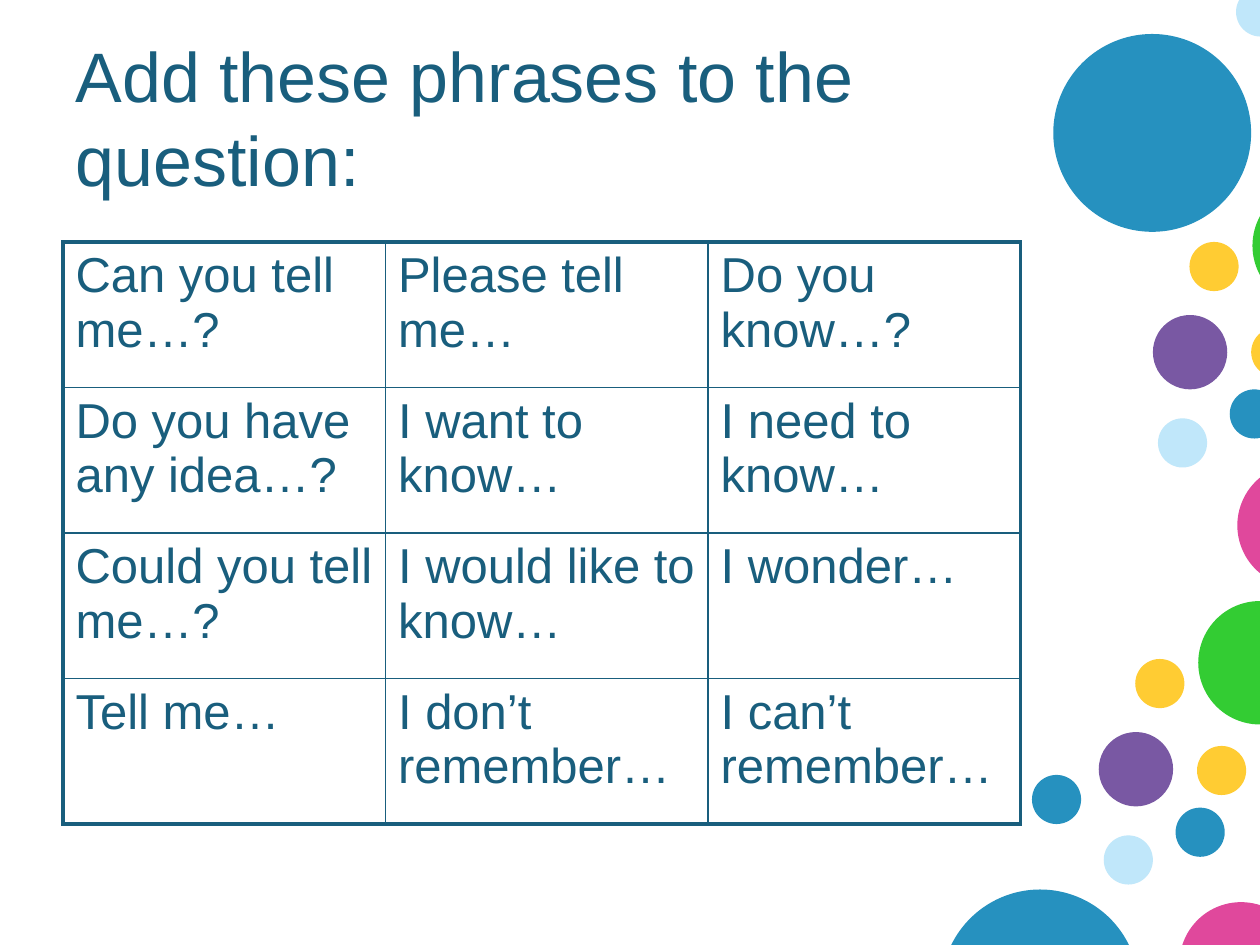
from lxml.etree import SubElement
from pptx import Presentation
from pptx.dml.color import RGBColor
from pptx.enum.shapes import MSO_SHAPE
from pptx.enum.text import MSO_ANCHOR, MSO_AUTO_SIZE, PP_ALIGN
from pptx.oxml.ns import qn
from pptx.util import Inches, Pt

COLORS = {
    "ink": "195E7D", "blue": "2691BF", "sky": "C0E7FA", "green": "33CC33",
    "yellow": "FFCC33", "pink": "E0489C", "purple": "7958A3",
}
DIAMETERS = {"small": 0.39, "medium": 0.59, "large": 0.98, "huge": 1.57}
BUBBLES = [
    ("green", "large", 9.51, 4.77), ("yellow", "small", 9.01, 5.23),
    ("pink", "large", 9.82, 3.68), ("purple", "medium", 8.72, 5.81),
    ("blue", "small", 8.19, 6.15), ("yellow", "small", 9.5, 5.92),
    ("sky", "small", 8.76, 6.63), ("blue", "small", 9.33, 6.41),
    ("blue", "huge", 8.36, 0.27), ("green", "large", 9.94, 1.46),
    ("yellow", "small", 9.44, 1.92), ("purple", "medium", 9.15, 2.5),
    ("yellow", "small", 9.93, 2.6), ("sky", "small", 9.19, 3.32),
    ("blue", "small", 9.76, 3.09), ("blue", "huge", 7.47, 7.06),
    ("pink", "large", 9.36, 7.16), ("sky", "small", 9.81, -0.1),
]
PHRASES = [
    ["Can you tell me…?", "Please tell me…", "Do you know…?"],
    ["Do you have any idea…?", "I want to know…", "I need to know…"],
    ["Could you tell me…?", "I would like to know…", "I wonder…"],
    ["Tell me…", "I don’t remember…", "I can’t remember…"],
]
COLUMN_SHARES = [2.56, 2.56, 2.48]
OUTER_LINE, INNER_LINE = 2.25, 1


def write_text(para, text, size):
    """Put one run of ink-coloured Arial in a paragraph."""
    span = para.add_run()
    span.text = text
    for name, value in {"name": "Arial", "size": Pt(size), "bold": False}.items():
        setattr(span.font, name, value)
    span.font.color.rgb = RGBColor.from_string(COLORS["ink"])


def add_bubbles(page, left, top):
    """Scatter the coloured circles, offset from the given corner."""
    for color, size, x, y in BUBBLES:
        diameter = Inches(DIAMETERS[size])
        bubble = page.shapes.add_shape(
            MSO_SHAPE.OVAL, Inches(left + x), Inches(top + y), diameter, diameter)
        bubble.shadow.inherit = False
        bubble.fill.solid()
        bubble.fill.fore_color.rgb = RGBColor.from_string(COLORS[color])
        bubble.line.fill.background()


def place_title(page, text, left, top, width, height):
    """Move the title placeholder into its box and fill it."""
    title = page.shapes.title
    box = {"left": left, "top": top, "width": width, "height": height}
    for name, value in box.items():
        setattr(title, name, Inches(value))
    frame = title.text_frame
    layout = {"auto_size": MSO_AUTO_SIZE.NONE, "word_wrap": True,
              "vertical_anchor": MSO_ANCHOR.MIDDLE}
    for name, value in layout.items():
        setattr(frame, name, value)
    frame.paragraphs[0].alignment = PP_ALIGN.LEFT
    write_text(frame.paragraphs[0], text, 40)


def set_borders(cell, widths):
    """Draw the four cell borders with the given point widths."""
    properties = cell._tc.get_or_add_tcPr()
    for side, width in widths.items():
        line = SubElement(properties, qn(f"a:ln{side}"), w=str(Pt(width)))
        fill = SubElement(line, qn("a:solidFill"))
        SubElement(fill, qn("a:srgbClr"), val=COLORS["ink"])


def add_phrase_table(page, left, top, width, height):
    """Build the phrase grid with a heavy frame and light inner lines."""
    row_count, column_count = len(PHRASES), len(COLUMN_SHARES)
    table = page.shapes.add_table(
        row_count, column_count, Inches(left), Inches(top),
        Inches(width), Inches(height)).table
    table.first_row = table.horz_banding = False
    for column, share in zip(table.columns, COLUMN_SHARES):
        column.width = Inches(width * share / sum(COLUMN_SHARES))
    for row, phrases in enumerate(PHRASES):
        for column, phrase in enumerate(phrases):
            cell = table.cell(row, column)
            on_frame = {"L": column == 0, "R": column == column_count - 1,
                        "T": row == 0, "B": row == row_count - 1}
            set_borders(cell, {side: OUTER_LINE if outer else INNER_LINE
                               for side, outer in on_frame.items()})
            cell.fill.background()
            para = cell.text_frame.paragraphs[0]
            spacing = SubElement(para._p.get_or_add_pPr(), qn("a:spcBef"))
            SubElement(spacing, qn("a:spcPct"), val="20000")
            write_text(para, phrase, 28)


def main():
    """Build the deck and save it."""
    deck = Presentation()
    deck.slide_width, deck.slide_height = Inches(10), Inches(7.5)
    page = deck.slides.add_slide(deck.slide_layouts[5])
    add_bubbles(page, 0, 0)
    place_title(page, "Add these phrases to the question:", 0.5, 0.3, 7.91, 1.25)
    add_phrase_table(page, 0.5, 1.92, 7.6, 4.62)
    deck.save("out.pptx")


if __name__ == "__main__":
    main()
